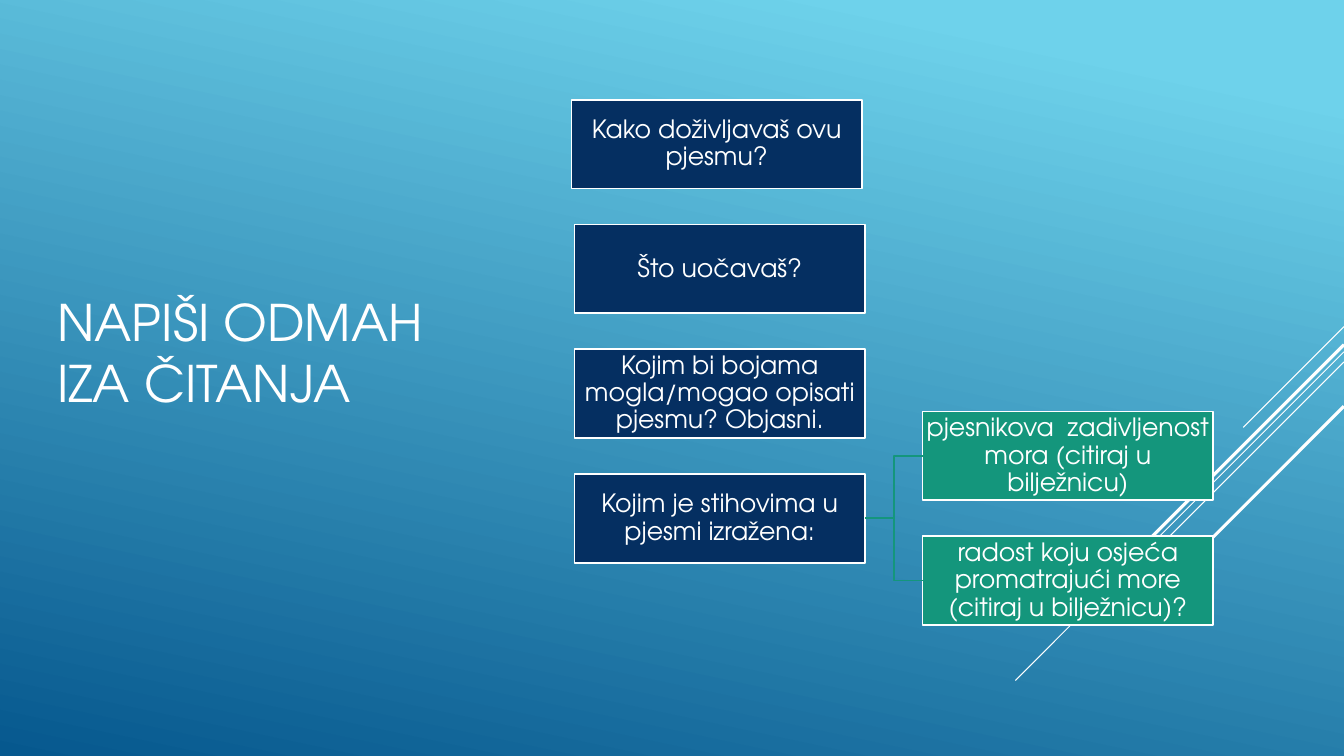
from lxml import etree
from pptx import Presentation
from pptx.dml.color import RGBColor
from pptx.enum.shapes import MSO_CONNECTOR as Connector, MSO_SHAPE as Shape
from pptx.enum.text import MSO_ANCHOR as Anchor, MSO_AUTO_SIZE as AutoSize, PP_ALIGN as Align
from pptx.oxml.ns import qn
from pptx.util import Pt

COLORS = {
    "sky": "6ED2EB",
    "sea": "06588E",
    "navy": "052F61",
    "green": "14967C",
    "white": "FFFFFF",
}
FONT = "TeX Gyre Adventor"

BOX_WIDTH, BOX_HEIGHT = 207.5, 63.4
FIRST_TOP, ROW_PITCH = 71.2, 89.1
QUESTION_LEFT, DETAIL_LEFT = 410.4, 659
RIGHT_SITE, LEFT_SITE = 3, 1

# Left edge, then text
QUESTIONS = [
    (408.2, "Kako doživljavaš ovu pjesmu?"),
    (QUESTION_LEFT, "Što uočavaš?"),
    (QUESTION_LEFT, "Kojim bi bojama mogla/mogao opisati pjesmu? Objasni."),
    (QUESTION_LEFT, "Kojim je stihovima u pjesmi izražena:"),
]
DETAILS = [
    "pjesnikova  zadivljenost mora (citiraj u bilježnicu)",
    "radost koju osjeća promatrajući more (citiraj u bilježnicu)?",
]
# Top at the right slide edge, diagonal run, line width
RAYS = [
    (233.3, 72, 0.75),
    (251.3, 234.7, 0.75),
    (258.5, 149, 0.75),
    (246.2, 137.5, 2.25),
    (290.2, 100, 2.25),
]


def rgb(name):
    return RGBColor.from_string(COLORS[name])


class SlideBuilder:
    def __init__(self, deck):
        self.deck = deck
        self.slide = deck.slides.add_slide(deck.slide_layouts[5])

    def background(self, start, end, angle):
        fill = self.slide.background.fill
        fill.gradient()
        fill.gradient_angle = angle
        for stop, color, position in zip(fill.gradient_stops, (start, end), (0.1, 1)):
            stop.color.rgb = rgb(color)
            stop.position = position

    def style_text(self, frame, text, size, align):
        frame.text = text
        frame.word_wrap = True
        frame.auto_size = AutoSize.NONE
        frame.vertical_anchor = Anchor.MIDDLE
        para = frame.paragraphs[0]
        para.alignment = align
        para.font.name = FONT
        para.font.size = Pt(size)
        para.font.color.rgb = rgb("white")
        return para

    def title(self, text, left, top, width, height):
        title = self.slide.shapes.title
        title.left, title.top = Pt(left), Pt(top)
        title.width, title.height = Pt(width), Pt(height)
        self.style_text(title.text_frame, text, 36, Align.LEFT)

    def box(self, text, left, row, color):
        """Add a filled box; row may be fractional to sit between two rows."""
        box = self.slide.shapes.add_shape(
            Shape.RECTANGLE, Pt(left), Pt(FIRST_TOP + row * ROW_PITCH),
            Pt(BOX_WIDTH), Pt(BOX_HEIGHT))
        box.shadow.inherit = False
        box.fill.solid()
        box.fill.fore_color.rgb = rgb(color)
        box.line.color.rgb = rgb("white")
        box.line.width = Pt(1.25)
        frame = box.text_frame
        frame.margin_left = frame.margin_right = Pt(0.9)
        frame.margin_top = frame.margin_bottom = Pt(0.9)
        self.style_text(frame, text, 18, Align.CENTER).line_spacing = 0.9
        return box

    def connector(self, kind, start, end, color, width):
        line = self.slide.shapes.add_connector(
            kind, *(Pt(value) for value in (*start, *end)))
        line.line.color.rgb = rgb(color)
        line.line.width = Pt(width)
        etree.SubElement(line._element.spPr, qn("a:effectLst"))
        return line

    def ray(self, top, run, width):
        edge = self.deck.slide_width.pt
        self.connector(Connector.STRAIGHT, (edge, top), (edge - run, top + run),
                       "white", width)

    def branch(self, parent, child):
        link = self.connector(Connector.ELBOW, (0, 0), (0, 0), "green", 1.25)
        link.begin_connect(parent, RIGHT_SITE)
        link.end_connect(child, LEFT_SITE)


def main():
    deck = Presentation()
    deck.slide_width, deck.slide_height = Pt(960), Pt(540)
    builder = SlideBuilder(deck)
    builder.background("sky", "sea", 258)
    for ray in RAYS:
        builder.ray(*ray)
    builder.title("NAPIŠI ODMAH IZA ČITANJA", 33.8, 143.3, 326.2, 216)
    for row, (left, text) in enumerate(QUESTIONS):
        question = builder.box(text, left, row, "navy")
    last_row = len(QUESTIONS) - 1
    for offset, text in zip((-0.5, 0.5), DETAILS):
        detail = builder.box(text, DETAIL_LEFT, last_row + offset, "green")
        builder.branch(question, detail)
    deck.save("out.pptx")


if __name__ == "__main__":
    main()
